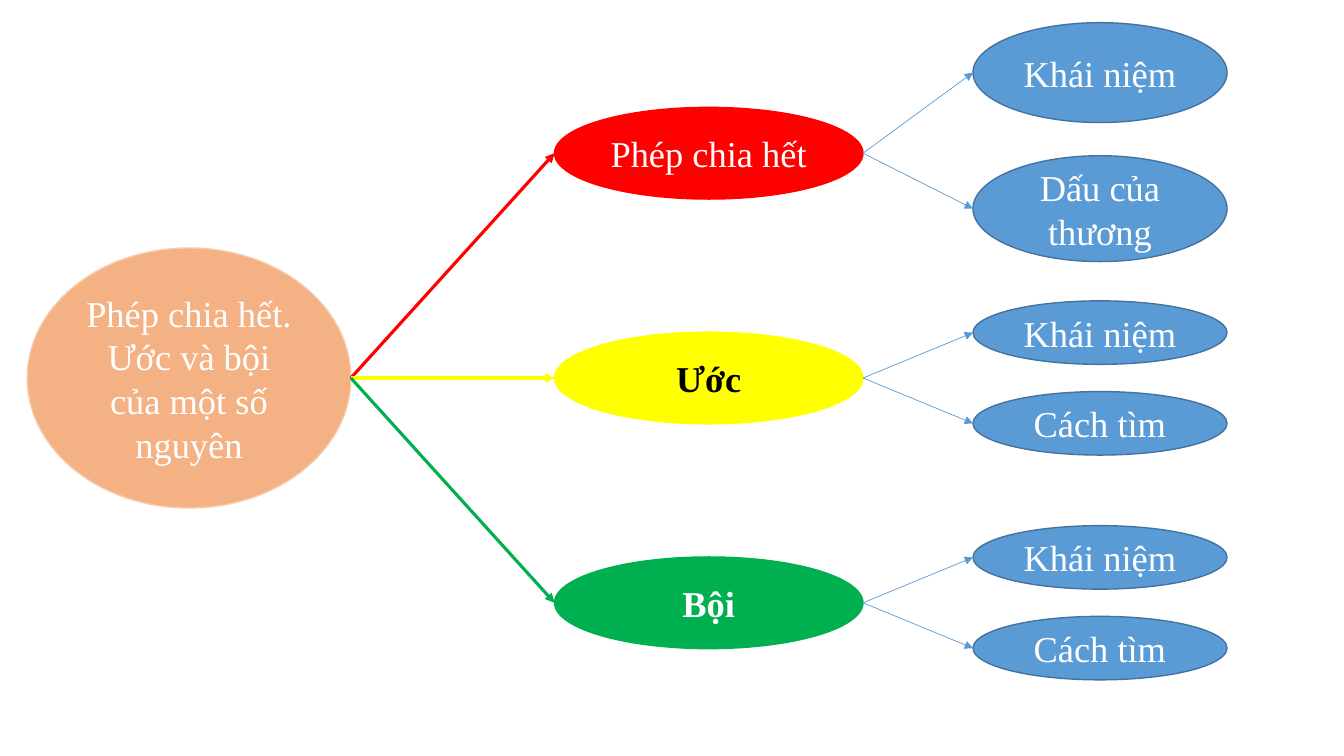
from pptx import Presentation
from pptx.dml.color import RGBColor
from pptx.enum.shapes import MSO_CONNECTOR, MSO_SHAPE
from pptx.enum.text import MSO_ANCHOR, PP_ALIGN
from pptx.oxml.ns import qn
from pptx.util import Pt
from lxml import etree

ELLIPSE = MSO_SHAPE.OVAL
STRAIGHT = MSO_CONNECTOR.STRAIGHT
CENTER, MIDDLE = PP_ALIGN.CENTER, MSO_ANCHOR.MIDDLE

EMU_PER_PX = 9144  # 100 px to the inch
FONT, TEXT_SIZE = "Times New Roman", Pt(26)

WHITE = RGBColor(0xFF, 0xFF, 0xFF)
BLACK = RGBColor(0x00, 0x00, 0x00)
PEACH = RGBColor(0xF4, 0xB1, 0x83)
PALE_PEACH = RGBColor(0xF8, 0xCB, 0xAD)
RED = RGBColor(0xFF, 0x00, 0x00)
YELLOW = RGBColor(0xFF, 0xFF, 0x00)
GREEN = RGBColor(0x00, 0xB0, 0x50)
BLUE = RGBColor(0x5B, 0x9B, 0xD5)
DARK_BLUE = RGBColor(0x43, 0x73, 0x9E)

# Boxes are left, top, width, height
ROOT_BOX = (27, 246, 321, 258)
BRANCH_LEFT, BRANCH_WIDTH, BRANCH_HEIGHT = 550, 306, 91
BRANCH_STEP = 223
LEAF_GAP, LEAF_WIDTH = 109, 252

# Leaves: label, centre offset from the branch, height
PAIR = [("Khái niệm", -45, 63), ("Cách tìm", 45, 63)]
BRANCHES = [
    ("Phép chia hết", RED, WHITE, False,
     [("Khái niệm", -80, 99), ("Dấu của thương", 55, 105)]),
    ("Ước", YELLOW, BLACK, True, PAIR),
    ("Bội", GREEN, WHITE, True, PAIR),
]


def px(length):
    return round(length * EMU_PER_PX)


def right_middle(box):
    left, top, width, height = box
    return left + width, top + height / 2


def add_node(slide, box, label, fill, outline, color=WHITE, bold=False):
    node = slide.shapes.add_shape(ELLIPSE, *map(px, box))
    node.shadow.inherit = False
    node.fill.solid()
    node.fill.fore_color.rgb = fill
    node.line.color.rgb = outline
    node.line.width = Pt(1)
    frame = node.text_frame
    frame.word_wrap = True
    frame.vertical_anchor = MIDDLE
    paragraph = frame.paragraphs[0]
    paragraph.alignment = CENTER
    run = paragraph.add_run()
    run.text = label
    run.font.name = FONT
    run.font.size = TEXT_SIZE
    run.font.bold = bold
    run.font.color.rgb = color


def add_arrow(slide, start, end, color, width):
    arrow = slide.shapes.add_connector(STRAIGHT, *map(px, (*start, *end)))
    arrow.line.color.rgb = color
    arrow.line.width = Pt(width)
    etree.SubElement(arrow.line._get_or_add_ln(), qn("a:tailEnd"), type="triangle")
    etree.SubElement(arrow._element.spPr, qn("a:effectLst"))


def add_leaves(slide, origin, leaves):
    """Blue ellipses to the right of a branch, each with a thin arrow."""
    left = origin[0] + LEAF_GAP
    for label, offset, height in leaves:
        middle = origin[1] + offset
        add_node(slide, (left, middle - height / 2, LEAF_WIDTH, height),
                 label, BLUE, DARK_BLUE)
        add_arrow(slide, origin, (left, middle), BLUE, 0.5)


def add_branch(slide, origin, box, branch):
    """Coloured ellipse with its arrow from the root and its leaves."""
    label, fill, color, bold, leaves = branch
    left, top, _, height = box
    add_arrow(slide, origin, (left, top + height / 2), fill, 2.25)
    add_node(slide, box, label, fill, fill, color, bold)
    add_leaves(slide, right_middle(box), leaves)


def add_mind_map(slide, root_box):
    # Root topic
    add_node(slide, root_box, "Phép chia hết. Ước và bội của một số nguyên",
             PEACH, PALE_PEACH)
    # Branches, evenly spaced about the root's centre
    origin = right_middle(root_box)
    for index, branch in enumerate(BRANCHES):
        middle = origin[1] + (index - 1) * BRANCH_STEP
        box = (BRANCH_LEFT, middle - BRANCH_HEIGHT / 2, BRANCH_WIDTH, BRANCH_HEIGHT)
        add_branch(slide, origin, box, branch)


def main():
    deck = Presentation()
    deck.slide_width, deck.slide_height = px(1333), px(750)
    slide = deck.slides.add_slide(deck.slide_layouts[6])
    add_mind_map(slide, ROOT_BOX)
    deck.save("out.pptx")


if __name__ == "__main__":
    main()
